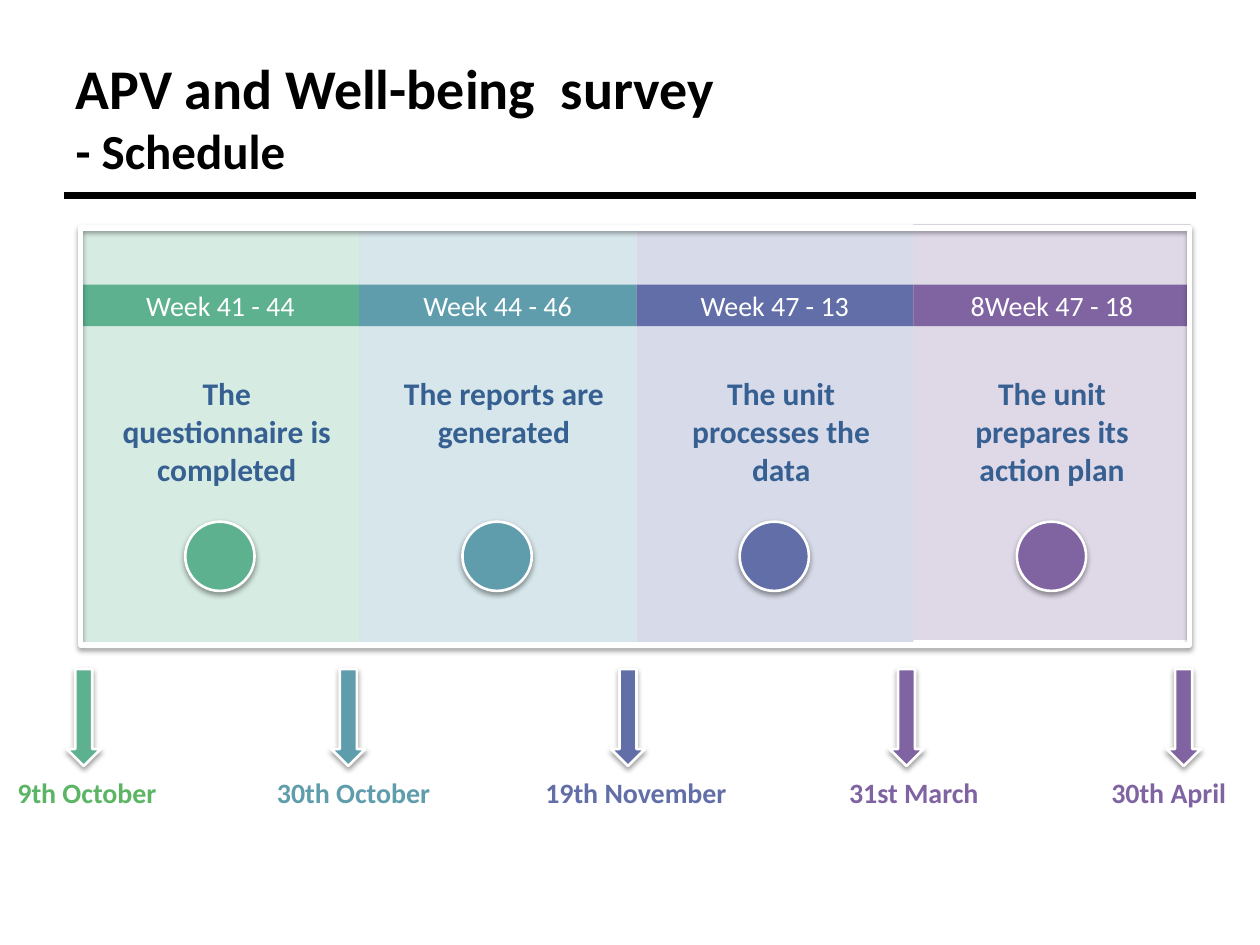
from dataclasses import dataclass

import pptx
import pptx.dml.color
import pptx.enum.shapes
import pptx.enum.text
import pptx.oxml
import pptx.oxml.ns
import pptx.util
from pptx.util import Inches

SHAPE = pptx.enum.shapes.MSO_SHAPE
ALIGN = pptx.enum.text.PP_ALIGN
ANCHOR = pptx.enum.text.MSO_ANCHOR
AUTO_SIZE = pptx.enum.text.MSO_AUTO_SIZE

GREEN, TEAL, BLUE, PURPLE = "5DB18E", "5F9DAC", "626EA7", "8064A2"
WHITE, BLACK, CAPTION_BLUE = "FFFFFF", "000000", "376092"
PHASES_LEFT, PHASE_WIDTH = 0.65, 2.2


@dataclass
class Phase:
    weeks: str
    caption: str
    color: str
    panel_top: float = 1.81
    caption_inset: float = 0.16
    caption_height: float = 1.01


@dataclass
class Milestone:
    date: str
    color: str
    arrow_left: float
    label_left: float
    label_width: float
    label_color: str
    alignment: ALIGN = ALIGN.LEFT


PHASES = [
    Phase("Week 41 - 44", "The questionnaire is completed", GREEN),
    Phase("Week 44 - 46", "The reports are generated", TEAL, caption_height=0.71),
    Phase("Week 47 - 13", "The unit processes the data", BLUE),
    Phase("8Week 47 - 18", "The unit prepares its action plan", PURPLE,
          panel_top=1.78, caption_inset=0.11),
]
MILESTONES = [
    Milestone("9th October", GREEN, 0.53, 0.04, 1.5, "5CB565"),
    Milestone("30th October", TEAL, 2.63, 2.1, 1.63, TEAL),
    Milestone("19th November", BLUE, 4.85, 4.23, 1.86, BLUE),
    Milestone("31st March", PURPLE, 7.06, 6.64, 1.36, PURPLE),
    Milestone("30th April", PURPLE, 9.26, 8.59, 1.24, PURPLE, ALIGN.RIGHT),
]


def rgb(color: str):
    return pptx.dml.color.RGBColor.from_string(color)


def add_run(paragraph, text: str, size: float, color: str, bold: bool = False) -> None:
    run = paragraph.add_run()
    run.text = text
    run.font.name = "Calibri"
    run.font.size = pptx.util.Pt(size)
    run.font.bold = bold
    run.font.color.rgb = rgb(color)


def add_shadow(shape) -> None:
    shape._element.spPr.append(pptx.oxml.parse_xml(
        f'<a:effectLst {pptx.oxml.ns.nsdecls("a")}>'
        '<a:outerShdw blurRad="39370" dist="20320" dir="5400000" rotWithShape="0">'
        '<a:srgbClr val="000000"><a:alpha val="38000"/></a:srgbClr>'
        '</a:outerShdw></a:effectLst>'))


def add_block(slide, kind, left: float, top: float, width: float, height: float,
              fill: str | None = None, opacity: int = 100, outline: float = 0):
    """Add a preset shape; outlined ones get a white line and a soft shadow."""
    shape = slide.shapes.add_shape(
        kind, Inches(left), Inches(top), Inches(width), Inches(height))
    if fill:
        shape.fill.solid()
        shape.fill.fore_color.rgb = rgb(fill)
        if opacity < 100:
            color = shape.fill._xPr.find(".//" + pptx.oxml.ns.qn("a:srgbClr"))
            color.append(pptx.oxml.parse_xml(
                f'<a:alpha {pptx.oxml.ns.nsdecls("a")} val="{opacity * 1000}"/>'))
    else:
        shape.fill.background()
    if outline:
        shape.line.color.rgb = rgb(WHITE)
        shape.line.width = pptx.util.Pt(outline)
        add_shadow(shape)
    else:
        shape.line.fill.background()
        shape.shadow.inherit = False
    return shape


def add_label(slide, text: str, left: float, top: float, width: float, height: float,
              size: float, color: str, alignment, wrap: bool) -> None:
    box = slide.shapes.add_textbox(
        Inches(left), Inches(top), Inches(width), Inches(height))
    box.text_frame.word_wrap = wrap
    box.text_frame.auto_size = AUTO_SIZE.SHAPE_TO_FIT_TEXT
    paragraph = box.text_frame.paragraphs[0]
    paragraph.alignment = alignment
    add_run(paragraph, text, size, color, bold=True)


def add_title(slide) -> None:
    title = slide.shapes.title
    title.left, title.top = Inches(0.5), Inches(0.3)
    title.width, title.height = Inches(9), Inches(1.25)
    title.text_frame.auto_size = AUTO_SIZE.NONE
    title.text_frame.vertical_anchor = ANCHOR.MIDDLE
    paragraph = title.text_frame.paragraphs[0]
    paragraph.alignment = ALIGN.LEFT
    add_run(paragraph, "APV and Well-being  survey", 32, BLACK, bold=True)
    paragraph.add_line_break()
    add_run(paragraph, "- Schedule", 28, BLACK, bold=True)

    rule = slide.shapes.add_connector(
        pptx.enum.shapes.MSO_CONNECTOR.STRAIGHT,
        Inches(0.51), Inches(1.55), Inches(9.49), Inches(1.55))
    rule.line.color.rgb = rgb(BLACK)
    rule.line.width = pptx.util.Pt(3.75)
    rule._element.spPr.append(
        pptx.oxml.parse_xml(f'<a:effectLst {pptx.oxml.ns.nsdecls("a")}/>'))


def add_phase(slide, phase: Phase, left: float) -> None:
    add_block(slide, SHAPE.RECTANGLE, left, phase.panel_top, PHASE_WIDTH, 3.3,
              phase.color, opacity=25)
    bar = add_block(slide, SHAPE.RECTANGLE, left, 2.26, PHASE_WIDTH, 0.33, phase.color)
    bar.text_frame.vertical_anchor = ANCHOR.MIDDLE
    paragraph = bar.text_frame.paragraphs[0]
    paragraph.alignment = ALIGN.CENTER
    add_run(paragraph, phase.weeks, 16, WHITE)
    add_block(slide, SHAPE.OVAL, left + 0.82, 4.14, 0.55, 0.55, phase.color, outline=1.5)
    add_label(slide, phase.caption, left + phase.caption_inset, 2.92, 1.98,
              phase.caption_height, 18, CAPTION_BLUE, ALIGN.CENTER, wrap=True)


def add_milestone(slide, milestone: Milestone) -> None:
    add_block(slide, SHAPE.DOWN_ARROW, milestone.arrow_left, 5.31, 0.27, 0.77,
              milestone.color, outline=1.5)
    add_label(slide, milestone.date, milestone.label_left, 6.11, milestone.label_width,
              0.37, 16, milestone.label_color, milestone.alignment, wrap=False)


def main() -> None:
    presentation = pptx.Presentation()
    presentation.slide_width, presentation.slide_height = Inches(10), Inches(7.5)
    slide = presentation.slides.add_slide(presentation.slide_layouts[5])
    add_title(slide)

    # Four phases inside one white frame
    for index, phase in enumerate(PHASES):
        add_phase(slide, phase, PHASES_LEFT + index * PHASE_WIDTH)
    add_block(slide, SHAPE.RECTANGLE, 0.64, 1.81, 8.8, 3.31, outline=3)

    # Dates below the frame
    for milestone in MILESTONES:
        add_milestone(slide, milestone)

    presentation.save("out.pptx")


if __name__ == "__main__":
    main()
